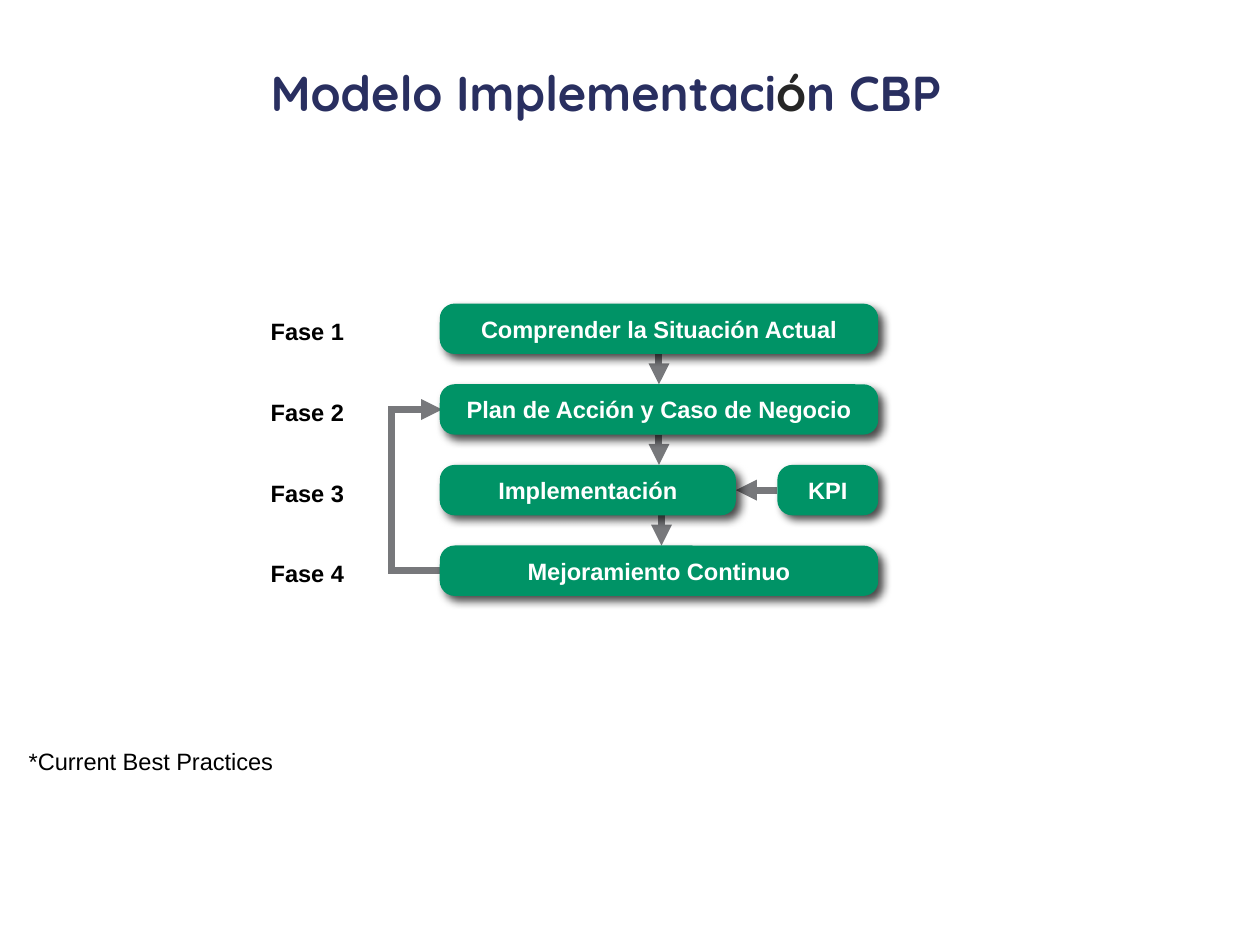
"""Build the slide with the four phases of the CBP implementation model."""
from dataclasses import dataclass

from lxml import etree
from pptx import Presentation
from pptx.dml.color import RGBColor
from pptx.enum.shapes import MSO_CONNECTOR, MSO_SHAPE
from pptx.enum.text import MSO_ANCHOR, PP_ALIGN
from pptx.oxml.ns import qn
from pptx.util import Inches, Pt

ROUNDED = MSO_SHAPE.ROUNDED_RECTANGLE
STRAIGHT = MSO_CONNECTOR.STRAIGHT
MIDDLE = MSO_ANCHOR.MIDDLE
CENTER, LEFT = PP_ALIGN.CENTER, PP_ALIGN.LEFT
TOP_SIDE, LEFT_SIDE, BOTTOM_SIDE, RIGHT_SIDE = range(4)


@dataclass(frozen=True)
class Theme:
    navy: str = "292F60"
    charcoal: str = "262626"
    green: str = "009366"
    gray: str = "77787B"
    black: str = "000000"
    white: str = "FFFFFF"
    title_font: str = "Quicksand"
    body_font: str = "Arial"
    title_size: float = 28
    body_size: float = 13.5
    arrow_width: float = 4


@dataclass(frozen=True)
class Box:
    text: str
    row: int
    left: float = 3.49
    width: float = 3.48

    @property
    def top(self) -> float:
        return FIRST_TOP + self.row * ROW_PITCH


THEME = Theme()
FIRST_TOP, ROW_PITCH, BOX_HEIGHT = 2.41, 0.64, 0.4
LABEL_OFFSET = 0.06
UNDERSTAND = Box("Comprender la Situación Actual", 0)
PLAN = Box("Plan de Acción y Caso de Negocio", 1)
IMPLEMENT = Box("Implementación", 2, width=2.35)
KPI = Box("KPI", 2, left=6.17, width=0.8)
IMPROVE = Box("Mejoramiento Continuo", 3)
BOXES = (UNDERSTAND, PLAN, IMPLEMENT, KPI, IMPROVE)
LINKS = (
    (UNDERSTAND, BOTTOM_SIDE, PLAN, TOP_SIDE),
    (KPI, LEFT_SIDE, IMPLEMENT, RIGHT_SIDE),
)
TITLE_RUNS = (
    ("Modelo Implementaci", THEME.navy),
    ("ó", THEME.charcoal),
    ("n CBP", THEME.navy),
)


def add_run(paragraph, text: str, color: str, **changes) -> None:
    run = paragraph.add_run()
    run.text = text
    formats = {"name": THEME.body_font, "size": Pt(THEME.body_size), "bold": True}
    for name, value in (formats | changes).items():
        setattr(run.font, name, value)
    run.font.color.rgb = RGBColor.from_string(color)


def set_frame(frame, **formats) -> None:
    for name, value in formats.items():
        setattr(frame, name, value)


def add_title(slide) -> None:
    shape = slide.shapes.add_textbox(Inches(2.05), Inches(0.23), Inches(7.46), Inches(1.06))
    set_frame(shape.text_frame, word_wrap=True, vertical_anchor=MIDDLE)
    paragraph = shape.text_frame.paragraphs[0]
    paragraph.line_spacing = 0.9
    for text, color in TITLE_RUNS:
        add_run(paragraph, text, color, name=THEME.title_font, size=Pt(THEME.title_size))


def add_label(slide, text: str, left: float, top: float, width: float, bold: bool = True) -> None:
    shape = slide.shapes.add_textbox(Inches(left), Inches(top), Inches(width), Inches(0.33))
    set_frame(shape.text_frame, word_wrap=False)
    paragraph = shape.text_frame.paragraphs[0]
    paragraph.alignment = LEFT
    add_run(paragraph, text, THEME.black, bold=bold)


def add_shadow(shape) -> None:
    shape.shadow.inherit = False
    effects = shape.element.spPr.find(qn("a:effectLst"))
    shadow = etree.SubElement(
        effects, qn("a:outerShdw"), blurRad=str(Pt(5)), dist=str(Pt(4)),
        dir=str(45 * 60000), algn="tl", rotWithShape="0",
    )
    color = etree.SubElement(shadow, qn("a:srgbClr"), val=THEME.black)
    etree.SubElement(color, qn("a:alpha"), val="70000")


def add_box(slide, box: Box):
    shape = slide.shapes.add_shape(
        ROUNDED, Inches(box.left), Inches(box.top), Inches(box.width), Inches(BOX_HEIGHT)
    )
    shape.adjustments[0] = 0.297
    shape.fill.solid()
    shape.fill.fore_color.rgb = RGBColor.from_string(THEME.green)
    shape.line.fill.background()
    add_shadow(shape)
    set_frame(shape.text_frame, word_wrap=False, vertical_anchor=MIDDLE)
    paragraph = shape.text_frame.paragraphs[0]
    paragraph.alignment = CENTER
    add_run(paragraph, box.text, THEME.white)
    return shape


def style_arrow(slide, arrow) -> None:
    arrow.line.color.rgb = RGBColor.from_string(THEME.gray)
    arrow.line.width = Pt(THEME.arrow_width)
    properties = arrow.element.spPr
    line = properties.find(qn("a:ln"))
    etree.SubElement(line, qn("a:miter"), lim="800000")
    etree.SubElement(line, qn("a:tailEnd"), type="triangle")
    if properties.find(qn("a:effectLst")) is None:
        etree.SubElement(properties, qn("a:effectLst"))
    slide.shapes.element.insert(2, arrow.element)


def add_arrow(slide, x: float, top: float, bottom: float):
    return slide.shapes.add_connector(STRAIGHT, Inches(x), Inches(top), Inches(x), Inches(bottom))


def add_loop(slide) -> None:
    start_y = IMPROVE.top + BOX_HEIGHT / 2
    end_y = PLAN.top + BOX_HEIGHT / 2
    builder = slide.shapes.build_freeform(Inches(3.62), Inches(start_y))
    corners = ((3.11, start_y), (3.11, end_y), (3.51, end_y))
    builder.add_line_segments([(Inches(x), Inches(y)) for x, y in corners], close=False)
    loop = builder.convert_to_shape()
    loop.fill.background()
    loop.shadow.inherit = False
    style_arrow(slide, loop)


def main() -> None:
    presentation = Presentation()
    presentation.slide_width, presentation.slide_height = Inches(10), Inches(7.5)
    slide = presentation.slides.add_slide(presentation.slide_layouts[6])
    add_title(slide)
    shapes = {box: add_box(slide, box) for box in BOXES}
    plan_to_implement = add_arrow(slide, 5.23, PLAN.top + BOX_HEIGHT, IMPLEMENT.top)
    plan_to_implement.begin_connect(shapes[PLAN], BOTTOM_SIDE)
    style_arrow(slide, plan_to_implement)
    style_arrow(slide, add_arrow(slide, 5.25, IMPLEMENT.top + BOX_HEIGHT, IMPROVE.top))
    for source, source_side, target, target_side in LINKS:
        arrow = add_arrow(slide, source.left, source.top, target.top)
        arrow.begin_connect(shapes[source], source_side)
        arrow.end_connect(shapes[target], target_side)
        style_arrow(slide, arrow)
    add_loop(slide)
    for row in range(4):
        add_label(slide, f"Fase {row + 1}", 2.05, FIRST_TOP + LABEL_OFFSET + row * ROW_PITCH, 0.79)
    add_label(slide, "*Current Best Practices", 0.13, 5.88, 2.17, bold=False)
    presentation.save("out.pptx")


if __name__ == "__main__":
    main()
